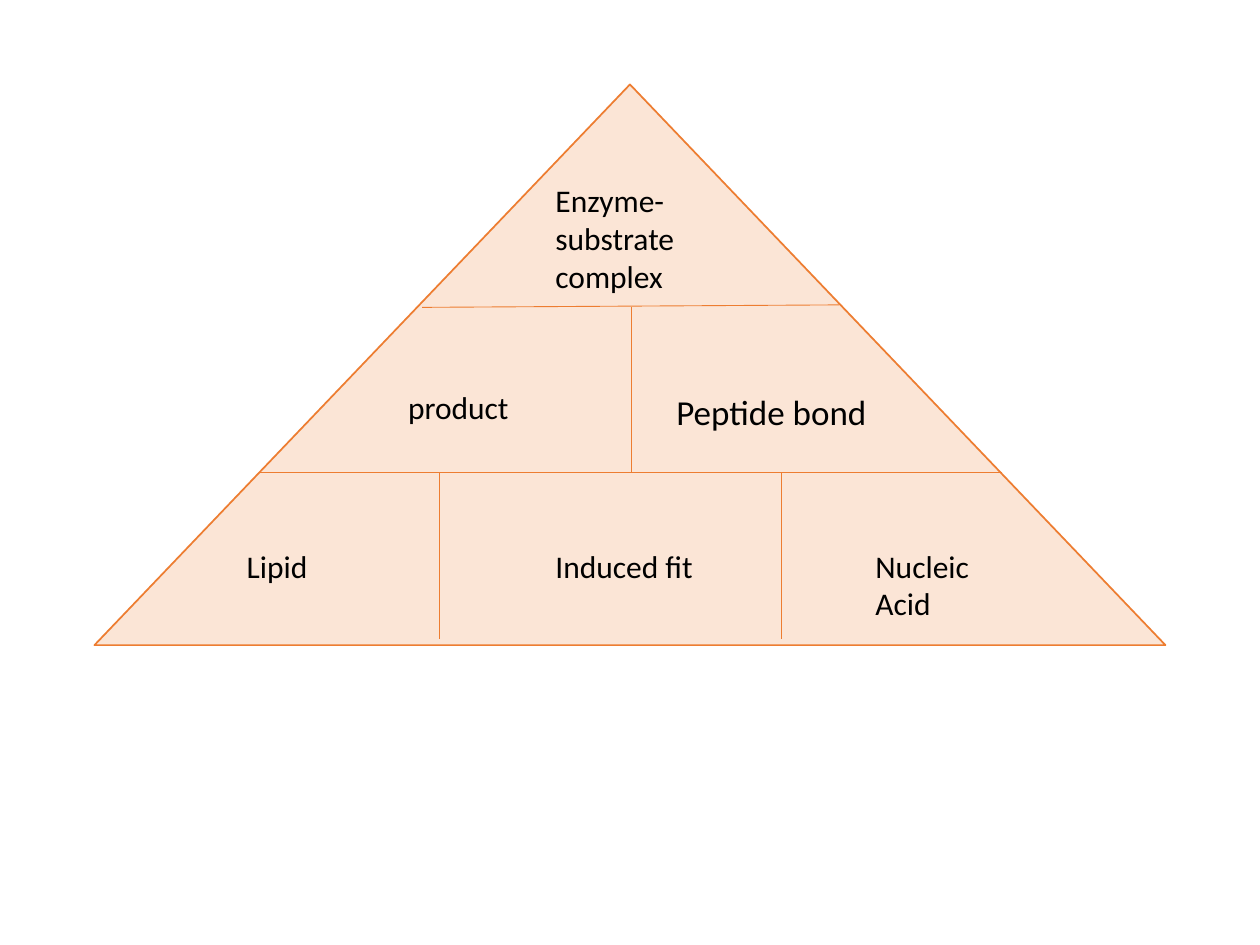
import pptx
import pptx.dml.color
import pptx.enum.shapes
import pptx.enum.text
import pptx.oxml.ns
import pptx.util
from lxml import etree

Pt = pptx.util.Pt
ORANGE, PEACH, BLACK = "ED7D31", "FBE5D6", "000000"


def color(value):
    return pptx.dml.color.RGBColor.from_string(value)


def add_text(slide, text, left, top, width, height, size=18, font="Calibri", fill=BLACK):
    shape = slide.shapes.add_textbox(Pt(left), Pt(top), Pt(width), Pt(height))
    frame = shape.text_frame
    frame.word_wrap = True
    frame.auto_size = pptx.enum.text.MSO_AUTO_SIZE.SHAPE_TO_FIT_TEXT
    run = frame.paragraphs[0].add_run()
    run.text = text
    run.font.name = font
    run.font.size = Pt(size)
    run.font.color.rgb = color(fill)


def add_divider(slide, start_x, start_y, end_x, end_y):
    connector = slide.shapes.add_connector(
        pptx.enum.shapes.MSO_CONNECTOR.STRAIGHT,
        Pt(start_x), Pt(start_y), Pt(end_x), Pt(end_y))
    connector.line.color.rgb = color(ORANGE)
    connector.line.width = Pt(0.5)
    etree.SubElement(connector._element.spPr, pptx.oxml.ns.qn("a:effectLst"))


def add_pyramid(slide, left, top, width, height):
    # Outline
    triangle = slide.shapes.add_shape(
        pptx.enum.shapes.MSO_SHAPE.ISOSCELES_TRIANGLE,
        Pt(left), Pt(top), Pt(width), Pt(height))
    triangle.shadow.inherit = False
    triangle.fill.solid()
    triangle.fill.fore_color.rgb = color(PEACH)
    triangle.line.color.rgb = color(ORANGE)
    triangle.line.width = Pt(1)

    # Row and column dividers, relative to the pyramid's box
    upper, lower, base = 127.4, 221.8, 316.8
    dividers = [
        (187.2, upper, 425.5, 126),
        (94.3, lower, 518.4, lower),
        (306.7, upper, 306.7, lower),
        (197.3, lower, 197.3, base),
        (392.4, lower, 392.4, base),
    ]
    for start_x, start_y, end_x, end_y in dividers:
        add_divider(slide, left + start_x, top + start_y, left + end_x, top + end_y)

    # Labels: text, x, y, width, height, size
    middle_x, bottom_y = 256.3, 260.6
    labels = [
        ("Enzyme-substrate complex", middle_x, 51.8, 105.8, 72.7, 18),
        ("product", 172.1, 169.9, 109.4, 28.8, 18),
        ("Peptide bond", 325.4, 171.4, 127.4, 31.7, 20),
        ("Lipid", 79.9, bottom_y, 125.3, 28.8, 18),
        ("Induced fit", middle_x, bottom_y, 125.3, 28.8, 18),
        ("Nucleic Acid", 439.2, bottom_y, 79.2, 51.1, 18),
    ]
    for text, x, y, label_width, label_height, size in labels:
        add_text(slide, text, left + x, top + y, label_width, label_height, size=size)


def main():
    presentation = pptx.Presentation()
    presentation.slide_width, presentation.slide_height = Pt(720), Pt(540)
    slide = presentation.slides.add_slide(presentation.slide_layouts.get_by_name("Blank"))
    add_pyramid(slide, 54, 48.24, 612, 320.4)
    presentation.save("out.pptx")


if __name__ == "__main__":
    main()
